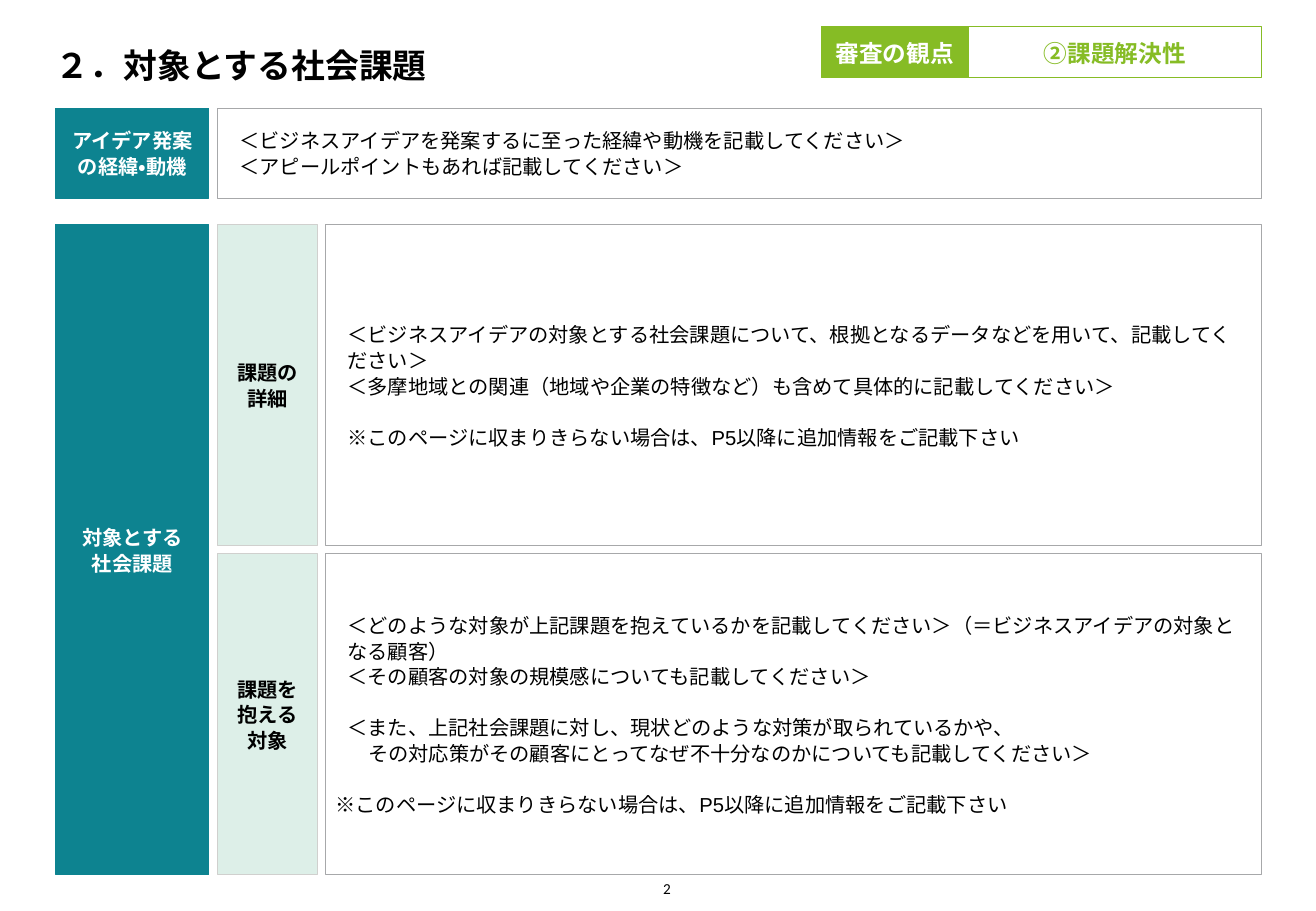
from copy import deepcopy
from dataclasses import dataclass

from pptx import Presentation
from pptx import util as u
from pptx.dml.color import RGBColor
from pptx.enum import lang, shapes, text
from pptx.oxml.ns import qn

EMU_PER_PX = 9144


@dataclass(frozen=True)
class Theme:
    black: str = "000000"
    white: str = "FFFFFF"
    green: str = "86BC25"
    teal: str = "0D8390"
    mint: str = "DDEFE8"
    mint_edge: str = "D0D0CE"
    grey: str = "A7A8AA"
    body_font: str = "Arial"
    title_font: str = "Calibri"
    title_size: int = 20
    badge_size: int = 14
    body_size: int = 12
    number_size: int = 9


THEME = Theme()


@dataclass(frozen=True)
class Style:
    size: int
    color: str
    bold: bool = False
    font: str = THEME.body_font
    align: text.PP_ALIGN = text.PP_ALIGN.LEFT
    anchor: text.MSO_ANCHOR = text.MSO_ANCHOR.MIDDLE
    inset: int = 8
    spacing: float = 1.06


@dataclass(frozen=True)
class Line:
    words: str
    indent: int = 10
    before: int = 0


@dataclass(frozen=True)
class Area:
    left: int
    top: int
    width: int
    height: int


@dataclass(frozen=True)
class Panel:
    area: Area
    fill: str
    edge: str
    style: Style
    lines: tuple[Line, ...]


def px(length: int) -> u.Emu:
    return u.Emu(length * EMU_PER_PX)


def apply(target, values: dict) -> None:
    for name, value in values.items():
        setattr(target, name, value)


def place(area: Area) -> tuple[u.Emu, ...]:
    return tuple(px(side) for side in (area.left, area.top, area.width, area.height))


def write(box, style: Style, lines: tuple[Line, ...]) -> None:
    frame = box.text_frame
    apply(frame, {"word_wrap": True, "vertical_anchor": style.anchor})
    apply(frame, {f"margin_{side}": px(style.inset) for side in ("left", "top", "right", "bottom")})
    for index, line in enumerate(lines):
        para = frame.paragraphs[0] if index == 0 else frame.add_paragraph()
        para.text = line.words
        apply(para, {"alignment": style.align, "line_spacing": style.spacing,
                     "space_before": u.Pt(line.before)})
        para._p.get_or_add_pPr().set("marL", str(px(line.indent)))
        for span in para.runs:
            apply(span.font, {"name": style.font, "size": u.Pt(style.size), "bold": style.bold,
                              "language_id": lang.MSO_LANGUAGE_ID.JAPANESE})
            span.font.color.rgb = RGBColor.from_string(style.color)
        for line_break in para._p.findall(qn("a:br")):
            line_break.append(deepcopy(para.runs[0]._r.rPr))


def draw_panel(page, panel: Panel) -> None:
    box = page.shapes.add_shape(shapes.MSO_SHAPE.RECTANGLE, *place(panel.area))
    box.shadow.inherit = False
    box.fill.solid()
    box.fill.fore_color.rgb = RGBColor.from_string(panel.fill)
    box.line.color.rgb = RGBColor.from_string(panel.edge)
    box.line.width = u.Pt(0.5)
    write(box, panel.style, panel.lines)


def draw_text(page, area: Area, style: Style, words: str) -> None:
    write(page.shapes.add_textbox(*place(area)), style, (Line(words, 0),))


def label(area: Area, fill: str, edge: str, color: str, words: str,
          size: int = THEME.body_size) -> Panel:
    style = Style(size, color, bold=True, align=text.PP_ALIGN.CENTER)
    return Panel(area, fill, edge, style, (Line(words, 0),))


def heading(area: Area, words: str) -> Panel:
    return label(area, THEME.teal, THEME.teal, THEME.white, words)


def subheading(area: Area, words: str) -> Panel:
    return label(area, THEME.mint, THEME.mint_edge, THEME.black, words)


def answer(area: Area, *lines: Line) -> Panel:
    return Panel(area, THEME.white, THEME.grey, Style(THEME.body_size, THEME.black), lines)


LEFT, RIGHT = 46, 1038
SUB_LEFT, ANSWER_LEFT = 179, 268
HEAD_WIDTH, SUB_WIDTH = 126, 82
IDEA_TOP, IDEA_HEIGHT = 89, 74
ISSUE_TOP, ISSUE_HEIGHT, ISSUE_STEP = 185, 264, 271
BADGE_LEFT, BADGE_TOP, BADGE_WIDTH, BADGE_HEIGHT = 676, 22, 121, 42
VIEW_LEFT = BADGE_LEFT + BADGE_WIDTH
BLANK_LINE = 15
OVERFLOW_NOTE = "※このページに収まりきらない場合は、P5以降に追加情報をご記載下さい"

ISSUES = (
    ("課題の\n詳細", (
        Line("＜ビジネスアイデアの対象とする社会課題について、根拠となるデータなどを用いて、記載してください＞"),
        Line("＜多摩地域との関連（地域や企業の特徴など）も含めて具体的に記載してください＞"),
        Line(OVERFLOW_NOTE, before=BLANK_LINE),
    )),
    ("課題を\n抱える\n対象", (
        Line("＜どのような対象が上記課題を抱えているかを記載してください＞（＝ビジネスアイデアの対象となる顧客）\n"
             "＜その顧客の対象の規模感についても記載してください＞"),
        Line("＜また、上記社会課題に対し、現状どのような対策が取られているかや、", before=BLANK_LINE),
        Line("その対応策がその顧客にとってなぜ不十分なのかについても記載してください＞", indent=27),
        Line(OVERFLOW_NOTE, indent=0, before=BLANK_LINE),
    )),
)


def build_panels() -> list[Panel]:
    panels = [
        label(Area(VIEW_LEFT, BADGE_TOP, RIGHT - VIEW_LEFT, BADGE_HEIGHT),
              THEME.white, THEME.green, THEME.green, "②課題解決性", THEME.badge_size),
        label(Area(BADGE_LEFT, BADGE_TOP, BADGE_WIDTH, BADGE_HEIGHT),
              THEME.green, THEME.green, THEME.white, "審査の観点", THEME.badge_size),
        heading(Area(LEFT, IDEA_TOP, HEAD_WIDTH, IDEA_HEIGHT), "アイデア発案の経緯・動機"),
        answer(Area(SUB_LEFT, IDEA_TOP, RIGHT - SUB_LEFT, IDEA_HEIGHT),
               Line("＜ビジネスアイデアを発案するに至った経緯や動機を記載してください＞"),
               Line("＜アピールポイントもあれば記載してください＞")),
        heading(Area(LEFT, ISSUE_TOP, HEAD_WIDTH, ISSUE_STEP + ISSUE_HEIGHT), "対象とする\n社会課題"),
    ]
    for row, (name, lines) in enumerate(ISSUES):
        top = ISSUE_TOP + row * ISSUE_STEP
        panels.append(answer(Area(ANSWER_LEFT, top, RIGHT - ANSWER_LEFT, ISSUE_HEIGHT), *lines))
        panels.append(subheading(Area(SUB_LEFT, top, SUB_WIDTH, ISSUE_HEIGHT), name))
    return panels


def main() -> None:
    deck = Presentation()
    apply(deck, {"slide_width": px(1083), "slide_height": px(750)})
    page = deck.slides.add_slide(deck.slide_layouts[6])
    title = Style(THEME.title_size, THEME.black, bold=True, font=THEME.title_font,
                  inset=0, spacing=1.0)
    number = Style(THEME.number_size, THEME.black, font=THEME.title_font, inset=0, spacing=1.0,
                   align=text.PP_ALIGN.RIGHT, anchor=text.MSO_ANCHOR.BOTTOM)
    draw_text(page, Area(LEFT, 20, RIGHT - LEFT, 67), title, "２．対象とする社会課題")
    draw_text(page, Area(532, 720, 20, 19), number, "2")
    for panel in build_panels():
        draw_panel(page, panel)
    deck.save("out.pptx")


if __name__ == "__main__":
    main()
